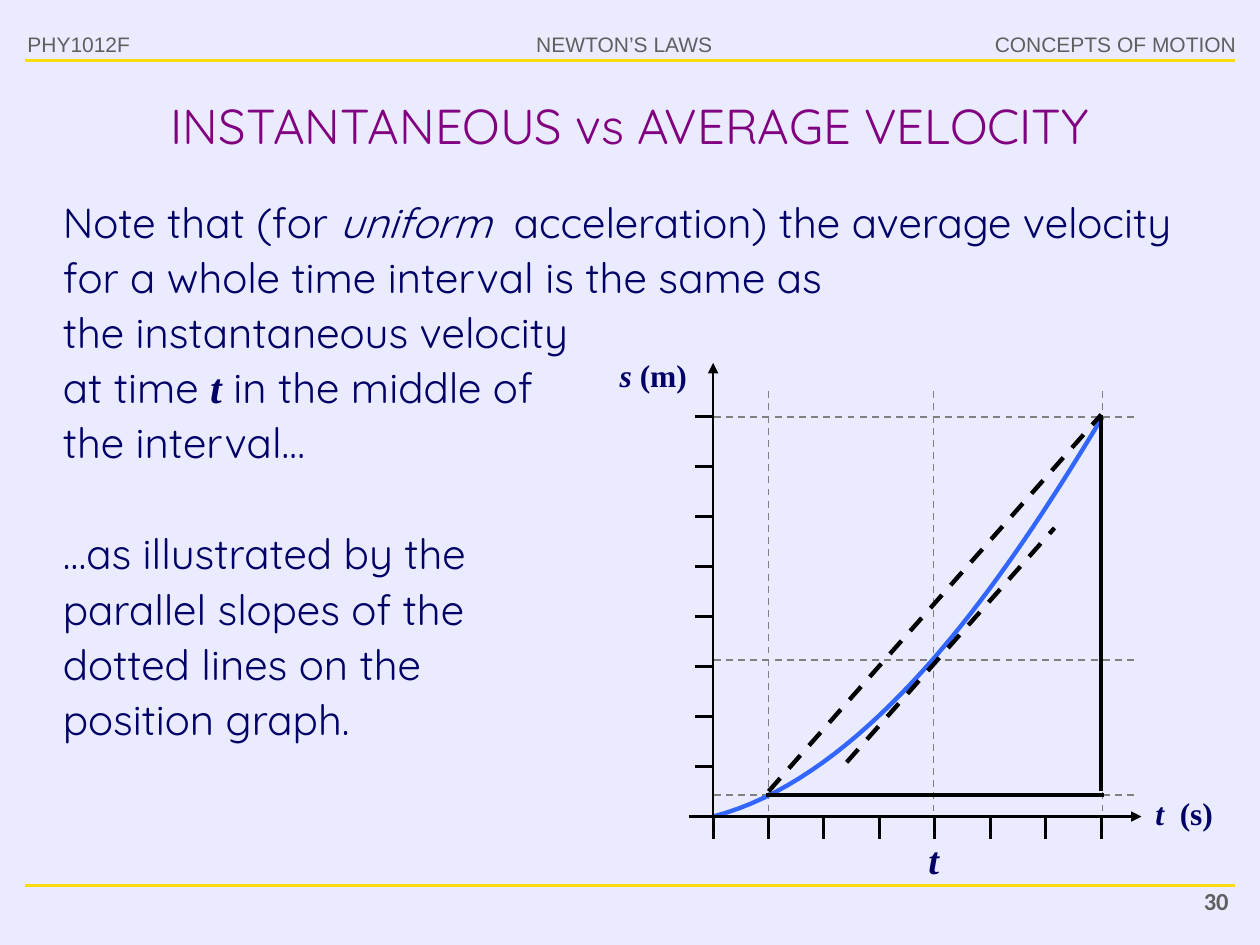
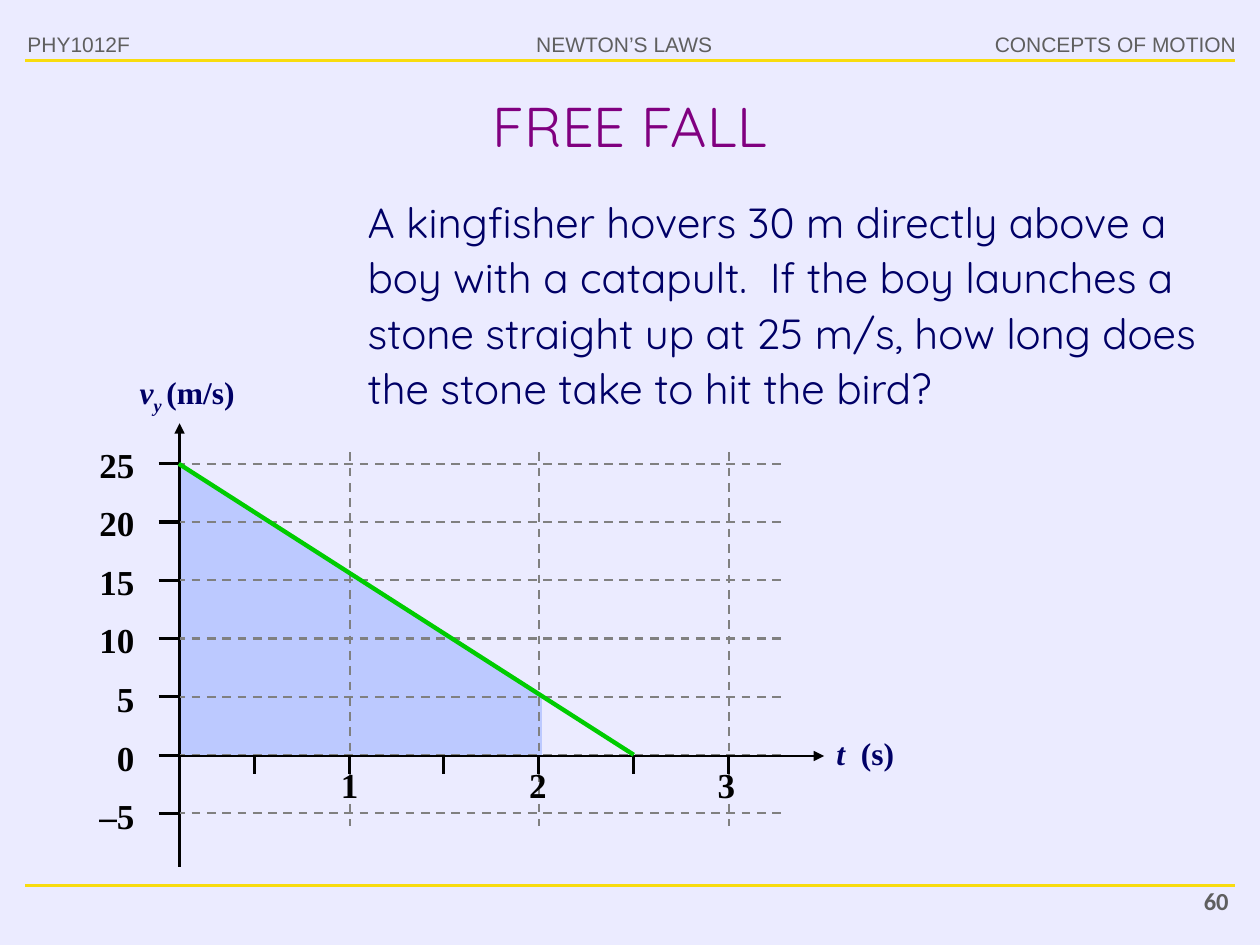
"""Build two lecture slides on average velocity and free fall."""
import dataclasses

import pptx
import pptx.dml.color
import pptx.enum.dml
import pptx.enum.shapes
import pptx.enum.text
import pptx.oxml.ns
import pptx.util
from lxml import etree

ALIGN = pptx.enum.text.PP_ALIGN
Pt = pptx.util.Pt


@dataclasses.dataclass(frozen=True)
class Theme:
    background: str = "EBEBFF"
    rule: str = "F8DC0E"
    muted: str = "5F5F5F"
    title: str = "800080"
    ink: str = "000066"
    axis: str = "000000"
    grid: str = "808080"
    curve: str = "3366FF"
    velocity: str = "00CC00"
    text_font: str = "Quicksand"
    symbol_font: str = "Times New Roman"
    header_font: str = "Arial"
    number_font: str = "Calibri"
    header_size: int = 12
    number_size: int = 14
    label_size: int = 18
    tick_size: int = 20
    symbol_size: int = 22
    body_size: int = 24
    hair: float = 1
    thin: float = 1.25
    medium: float = 1.75
    thick: float = 2.5


THEME = Theme()
HEADERS = [
    ("PHY1012F", 8.6, 85, ALIGN.LEFT),
    ("NEWTON’S LAWS", 280, 153.5, ALIGN.CENTER),
    ("CONCEPTS OF MOTION", 530, 183.5, ALIGN.RIGHT),
]
SYMBOL = {"font": THEME.symbol_font, "bold": True, "italic": True}

VELOCITY = {
    "title": "INSTANTANEOUS vs AVERAGE VELOCITY",
    "title_size": 28,
    "number": "30",
    "intro": [[
        ("Note that (for ", {}),
        ("uniform ", {"italic": True}),
        (" acceleration) the average velocity for a whole time interval is the same as", {}),
    ]],
    "explanation": [
        [
            ("the instantaneous velocity at time ", {}),
            ("t", SYMBOL),
            (" in the middle of the interval…", {}),
        ],
        "…as illustrated by the parallel slopes of the dotted lines on the position graph.",
    ],
    "position_label": [[("s ", {"italic": True}), ("(m)", {})]],
    "curve": [(407.5, 466.6), (504.7, 441.4), (585.4, 311.8), (630, 238.3)],
    "grid_x": [439.2, 533.5, 630],
    "grid_y": [238.3, 377.3, 454.3],
    "slopes": [((439.2, 452.2), (629.3, 236.9)), ((483.8, 435.6), (602.6, 301.7))],
    "triangle": [((437.8, 454.3), (630.7, 454.3)), ((629.3, 452.2), (629.3, 236.9))],
}

FREE_FALL = {
    "title": "FREE FALL",
    "title_size": 32,
    "number": "60",
    "question": "A kingfisher hovers 30 m directly above a boy with a catapult.  If the boy "
                "launches a stone straight up at 25 m/s, how long does the stone take to hit the bird?",
    "velocity_label": [[
        ("v", {"italic": True}),
        ("y ", {"italic": True, "baseline": -25000}),
        ("(m/s)", {}),
    ]],
    "speeds": ["25", "20", "15", "10", "5", "0", "–5"],
    "seconds": ["1", "2", "3"],
    "area": [(309.6, 397.4), (309.6, 432), (103, 432), (103, 266.4)],
    "fall": [(102.2, 265), (362.2, 431.3)],
}
TIME_LABEL = [[("t  ", {"italic": True}), ("(s)", {})]]


def rgb(color):
    return pptx.dml.color.RGBColor.from_string(color)


def add_text(page, text, left, top, width, height, *, size=THEME.body_size,
             font=THEME.text_font, color=THEME.ink, bold=False, italic=False,
             align=ALIGN.LEFT, indent=0, spacing=1.0, gap=0, inset=7.2,
             anchor=pptx.enum.text.MSO_ANCHOR.TOP):
    box = page.shapes.add_textbox(Pt(left), Pt(top), Pt(width), Pt(height))
    frame = box.text_frame
    frame.word_wrap = True
    frame.vertical_anchor = anchor
    frame.margin_left = frame.margin_right = Pt(inset)
    for index, content in enumerate([text] if isinstance(text, str) else text):
        para = frame.add_paragraph() if index else frame.paragraphs[0]
        para.alignment = align
        para.line_spacing = spacing
        if index:
            para.space_before = Pt(gap)
        if indent:
            properties = para._p.get_or_add_pPr()
            properties.set("marL", str(Pt(indent)))
            properties.set("indent", "0")
        for words, change in [(content, {})] if isinstance(content, str) else content:
            span = para.add_run()
            span.text = words
            span.font.size = Pt(size)
            span.font.name = change.get("font", font)
            span.font.bold = change.get("bold", bold)
            span.font.italic = change.get("italic", italic)
            span.font.color.rgb = rgb(color)
            if "baseline" in change:
                span._r.get_or_add_rPr().set("baseline", str(change["baseline"]))


def add_body(page, text, left, top, width, height, **style):
    add_text(page, text, left, top, width, height, indent=14.4, spacing=1.1, **style)


def add_axis_label(page, text, left, top, width, inset=7.2):
    add_body(page, text, left, top, width, 31, size=THEME.label_size,
             font=THEME.symbol_font, bold=True, inset=inset)


def add_tick_label(page, text, left, top, width, align):
    add_text(page, text, left, top, width, 32.4, size=THEME.tick_size, spacing=1.05,
             font=THEME.symbol_font, color=THEME.axis, bold=True, align=align)


def add_line(page, start, end, color=THEME.axis, width=THEME.medium, dash=False, arrow=False):
    line = page.shapes.add_connector(pptx.enum.shapes.MSO_CONNECTOR.STRAIGHT,
                                     *(Pt(value) for value in (*start, *end)))
    line.line.color.rgb = rgb(color)
    line.line.width = Pt(width)
    if dash:
        line.line.dash_style = pptx.enum.dml.MSO_LINE.DASH
    if arrow:
        etree.SubElement(line.line._get_or_add_ln(), pptx.oxml.ns.qn("a:tailEnd"), type="triangle")
    etree.SubElement(line._element.spPr, pptx.oxml.ns.qn("a:effectLst"))


def add_outline(page, points, color, width=0, alpha=None):
    corners = [(Pt(x), Pt(y)) for x, y in points]
    builder = page.shapes.build_freeform(*corners[0])
    builder.add_line_segments(corners[1:], close=alpha is not None)
    shape = builder.convert_to_shape()
    shape.shadow.inherit = False
    if alpha is None:
        shape.fill.background()
        shape.line.color.rgb = rgb(color)
        shape.line.width = Pt(width)
    else:
        shape.fill.solid()
        shape.fill.fore_color.rgb = rgb(color)
        tint = shape._element.spPr.find(".//" + pptx.oxml.ns.qn("a:srgbClr"))
        etree.SubElement(tint, pptx.oxml.ns.qn("a:alpha"), val=str(alpha * 1000))
        shape.line.fill.background()


def bezier(points, steps=40):
    def blend(t, values):
        a, b, c, d = values
        u = 1 - t
        return a * u**3 + 3 * b * u * u * t + 3 * c * u * t * t + d * t**3

    axes = list(zip(*points))
    return [tuple(blend(step / steps, values) for values in axes) for step in range(steps + 1)]


def add_grid(page, columns, rows, across, down, width):
    for x in columns:
        add_line(page, (x, down[0]), (x, down[1]), THEME.grid, width, dash=True)
    for y in rows:
        add_line(page, (across[0], y), (across[1], y), THEME.grid, width, dash=True)


def add_ticks(page, columns, rows, across, down):
    for x in columns:
        add_line(page, (x, down[0]), (x, down[1]))
    for y in rows:
        add_line(page, (across[0], y), (across[1], y))


def add_page(deck, content):
    page = deck.slides.add_slide(deck.slide_layouts[6])
    for y in (34.6, 506.2):
        add_line(page, (14.4, y), (705.6, y), THEME.rule)
    for text, left, width, align in HEADERS:
        add_text(page, text, left, 14.4, width, 22, size=THEME.header_size,
                 font=THEME.header_font, color=THEME.muted, align=align)
    add_text(page, content["number"], 635, 502.5, 74.2, 26.6, size=THEME.number_size,
             font=THEME.number_font, color=THEME.muted, bold=True, align=ALIGN.RIGHT)
    add_text(page, content["title"], 36, 45.4, 648, 51.8, size=content["title_size"],
             color=THEME.title, align=ALIGN.CENTER, anchor=pptx.enum.text.MSO_ANCHOR.MIDDLE)
    return page


def build_velocity(deck):
    content = VELOCITY
    page = add_page(deck, content)
    add_body(page, content["intro"], 14.4, 105.8, 691.2, 70.6)
    add_grid(page, content["grid_x"], content["grid_y"], (648, 405.4), (463.7, 221.8), THEME.hair)
    add_ticks(page, [407.5 + 31.68 * i for i in range(8)], [466.6 - 28.54 * i for i in range(9)],
              (397.4, 408.2), (466.6, 479.5))
    add_outline(page, bezier(content["curve"]), THEME.curve, THEME.thick)
    add_line(page, (407.5, 475.2), (407.5, 207.4), width=THEME.thin, arrow=True)
    add_line(page, (393.8, 466.6), (652.3, 466.6), width=THEME.thin, arrow=True)
    for start, end in content["slopes"]:
        add_line(page, start, end, width=THEME.thick, dash=True)
    for start, end in content["triangle"]:
        add_line(page, start, end, width=THEME.thick)
    add_axis_label(page, content["position_label"], 332.6, 198, 80.6)
    add_axis_label(page, TIME_LABEL, 645.8, 447.8, 50.4, inset=0)
    add_body(page, "t", 516.2, 471.6, 50.4, 36, size=THEME.symbol_size,
             font=THEME.symbol_font, bold=True, italic=True, inset=0)
    add_body(page, content["explanation"], 14.4, 168.5, 325.4, 260, gap=31.7)


def build_free_fall(deck):
    content = FREE_FALL
    page = add_page(deck, content)
    rows = [265 + 33.3 * i for i in range(len(content["speeds"]))]
    add_body(page, content["question"], 188.6, 105.8, 516.2, 134)
    add_outline(page, content["area"], THEME.curve, alpha=25)
    add_axis_label(page, content["velocity_label"], 58.3, 207.4, 95)
    add_line(page, (102.6, 495.4), (102.6, 241.9), width=THEME.thin, arrow=True)
    for index, speed in enumerate(content["speeds"]):
        add_tick_label(page, speed, 27.4, 248.4 + 33.5 * index, 56.5, ALIGN.RIGHT)
    add_grid(page, [199.8 + 108.4 * i for i in range(3)], rows,
             (100.8, 450), (258.5, 472.3), THEME.thin)
    add_ticks(page, [145.4 + 54.15 * i for i in range(6)], rows, (90.7, 103), (432.7, 442.1))
    add_line(page, (101.5, 432), (470.9, 432), width=THEME.thin, arrow=True)
    for index, second in enumerate(content["seconds"]):
        add_tick_label(page, second, 180 + 107.6 * index, 431.3, 39.6, ALIGN.CENTER)
    add_axis_label(page, TIME_LABEL, 456.5, 414, 69.8)
    add_outline(page, content["fall"], THEME.velocity, THEME.thick)


def main():
    deck = pptx.Presentation()
    deck.slide_width, deck.slide_height = Pt(720), Pt(540)
    backdrop = deck.slide_master.background.fill
    backdrop.solid()
    backdrop.fore_color.rgb = rgb(THEME.background)
    build_velocity(deck)
    build_free_fall(deck)
    deck.save("out.pptx")


if __name__ == "__main__":
    main()
